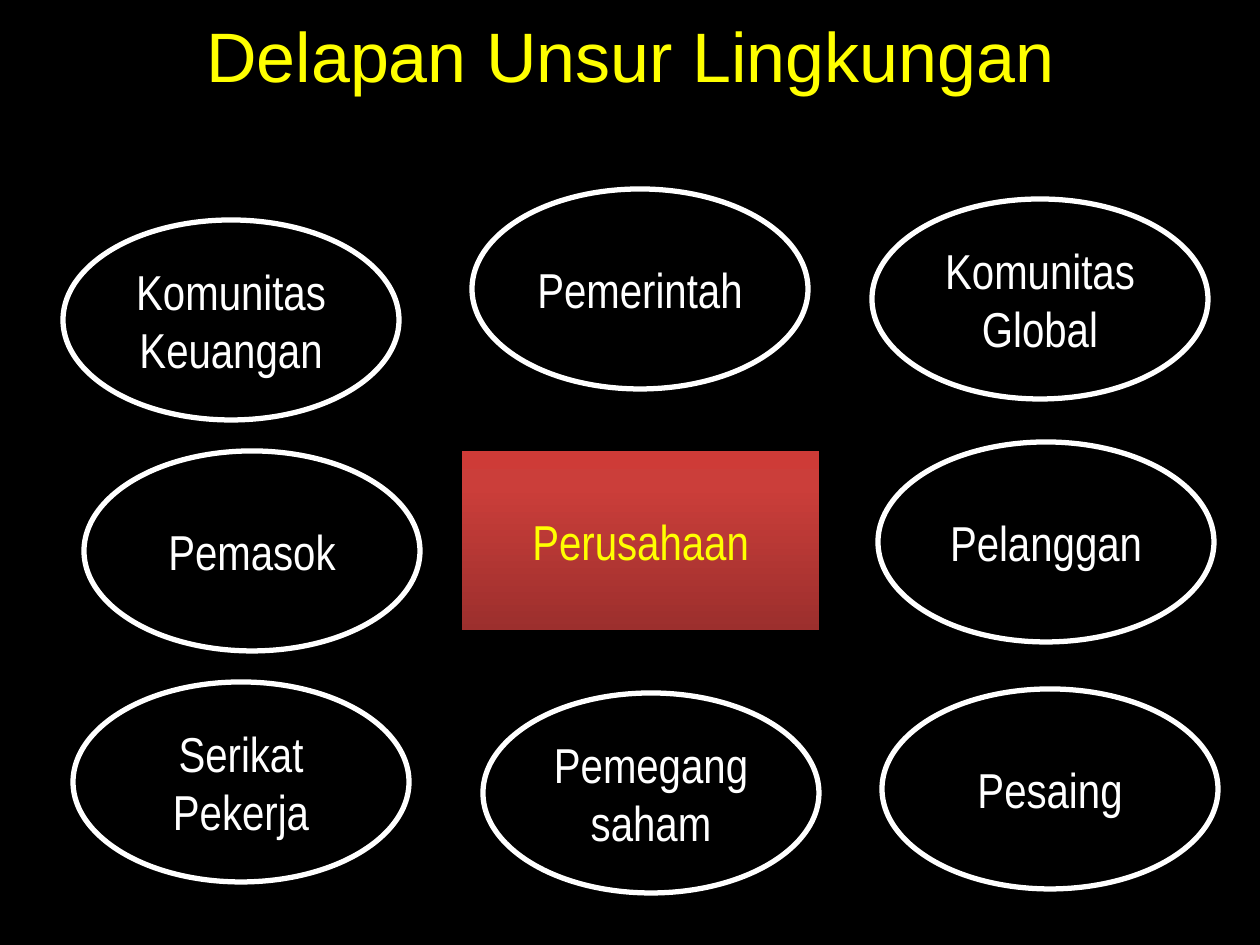
from copy import deepcopy
from pptx import Presentation
from pptx import util as u
from pptx.dml.color import RGBColor
from pptx.enum import shapes, text

PX = 914400 // 126
SIZE = (1260, 945)
OVAL = (336, 200)
BLACK, WHITE, YELLOW = "000000", "FFFFFF", "FFFF00"
TITLE = ("Delapan Unsur Lingkungan", (63, 0, 1134, 158))
CORE = ("Perusahaan", (462, 451, 357, 179))
STOPS = [(0, "9C2F2D"), (0.8, "CB3E3A"), (1, "CE3B37")]
PARTS = [
    ("Pemerintah", 472, 189),
    ("Pemegang saham", 483, 693),
    ("Komunitas Global", 872, 199),
    ("Pesaing", 882, 689),
    ("Pelanggan", 878, 442),
    ("Komunitas Keuangan", 63, 220),
    ("Serikat Pekerja", 73, 682),
    ("Pemasok", 84, 451),
]


def rgb(code):
    return RGBColor.from_string(code)


def emu(box):
    return [u.Emu(n * PX) for n in box]


def write(shape, words, size, face, color, anchor):
    frame = shape.text_frame
    frame.word_wrap = True
    frame.vertical_anchor = anchor
    para = frame.paragraphs[0]
    para.alignment = text.PP_ALIGN.CENTER
    run = para.add_run()
    run.text = words
    for key, value in {"name": face, "size": u.Pt(size), "bold": False}.items():
        setattr(run.font, key, value)
    run.font.color.rgb = rgb(color)


def node(kind, words, box, color):
    shape = slide.shapes.add_shape(kind, *emu(box))
    shape.shadow.inherit = False
    write(shape, words, 28, "Arial Narrow", color, text.MSO_ANCHOR.MIDDLE)
    return shape


def blend(shape, stops):
    shape.fill.gradient()
    shape.fill.gradient_angle = 90
    first = shape.element.xpath(".//a:gs")[0]
    first.addnext(deepcopy(first))
    for stop, (place, color) in zip(shape.fill.gradient_stops, stops):
        stop.position = place
        stop.color.rgb = rgb(color)


deck = Presentation()
deck.slide_width, deck.slide_height = emu(SIZE)
slide = deck.slides.add_slide(deck.slide_layouts[6])
slide.background.fill.solid()
slide.background.fill.fore_color.rgb = rgb(BLACK)

words, box = TITLE
title = slide.shapes.add_textbox(*emu(box))
title.text_frame.margin_top = u.Emu(13 * PX)
write(title, words, 40, "Arial", YELLOW, text.MSO_ANCHOR.TOP)

core = node(shapes.MSO_SHAPE.RECTANGLE, *CORE, YELLOW)
blend(core, STOPS)
core.line.fill.background()

for words, left, top in PARTS:
    oval = node(shapes.MSO_SHAPE.OVAL, words, (left, top, *OVAL), WHITE)
    oval.fill.solid()
    oval.fill.fore_color.rgb = rgb(BLACK)
    oval.line.color.rgb = rgb(WHITE)
    oval.line.width = u.Pt(3)

deck.save("out.pptx")
